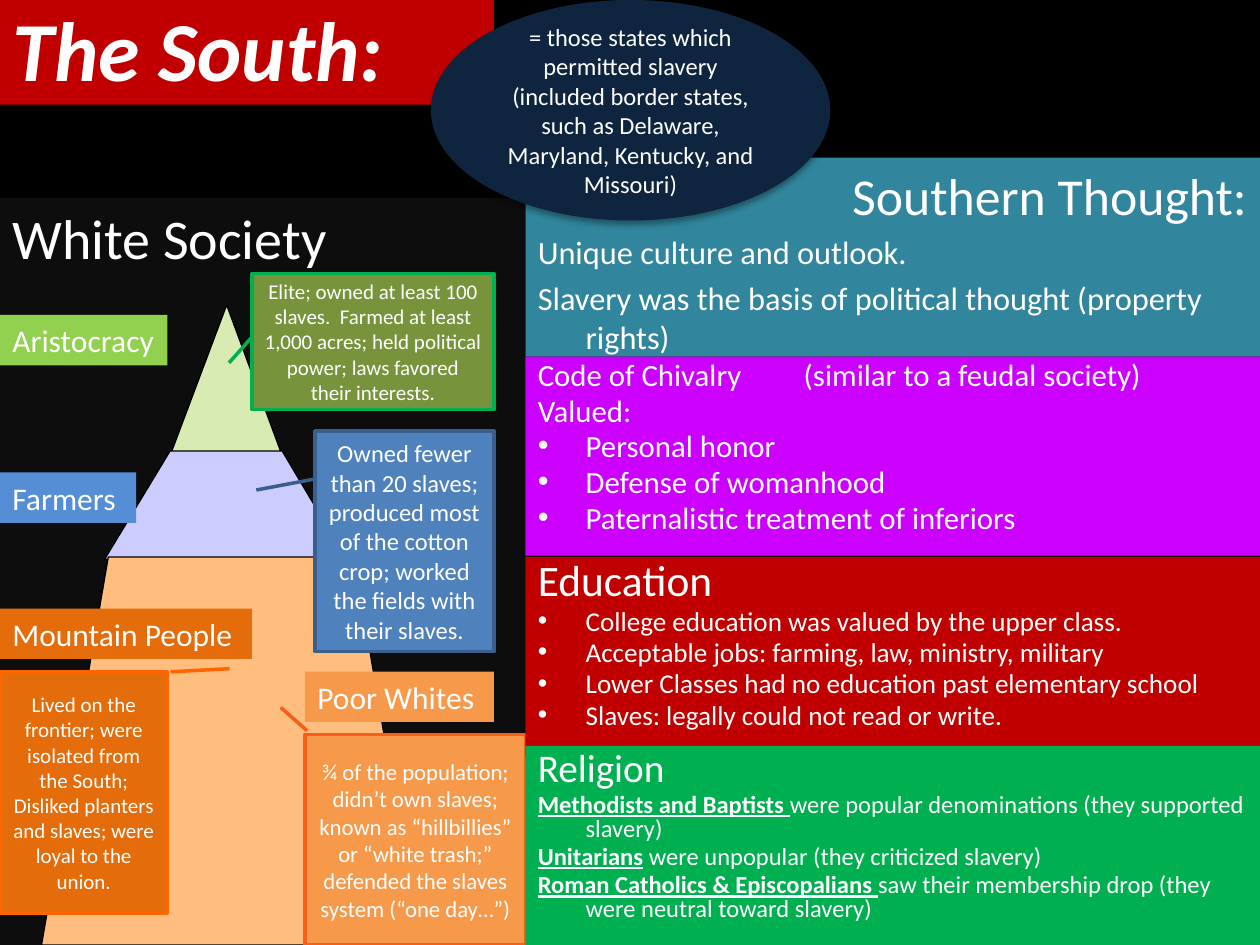
import pptx
import pptx.util
from lxml import etree
from pptx.dml.color import RGBColor
from pptx.enum.shapes import MSO_SHAPE
from pptx.enum.text import MSO_ANCHOR, MSO_AUTO_SIZE, PP_ALIGN
from pptx.oxml.ns import qn
from pptx.util import Inches

C = {
    "black": "000000", "white": "FFFFFF", "panel": "0D0D0D", "red": "C00000",
    "teal": "31859C", "purple": "CC00FF", "green": "00B050", "navy": "0F243E",
    "lime": "92D050", "olive": "77933C", "sky": "558ED5", "blue": "4F81BD",
    "blue_line": "3A5F8C", "rust": "E46C0A", "orange": "FF6600",
    "peach": "F7994B", "peach_line": "F65E1A", "tier_top": "D8EBB3",
    "tier_middle": "CCCCFF", "tier_base": "FFBE7D",
}
HANG = 0.38


def rgb(name):
    return RGBColor.from_string(C[name])


def paint(sp, fill, line=None, width=2):
    sp.fill.solid()
    sp.fill.fore_color.rgb = rgb(fill)
    if line:
        sp.line.color.rgb = rgb(line)
        sp.line.width = pptx.util.Pt(width)
    else:
        sp.line.fill.background()


def write(tf, text, size, lead="", bold=False, italic=False, align=PP_ALIGN.LEFT,
          hang=False, bullet=False, spacing=None, tab=None):
    """Add a paragraph; lead is a bold, underlined opening, tab a stop in inches."""
    first = not tf.paragraphs[0].runs
    p = tf.paragraphs[0] if first else tf.add_paragraph()
    pPr = p._p.get_or_add_pPr()
    if hang:
        pPr.set("marL", str(Inches(HANG)))
        pPr.set("indent", str(-Inches(HANG)))
    if bullet:
        etree.SubElement(pPr, qn("a:buFont"), typeface="Arial")
        etree.SubElement(pPr, qn("a:buChar"), char="•")
    if tab:
        tabs = etree.SubElement(pPr, qn("a:tabLst"))
        etree.SubElement(tabs, qn("a:tab"), pos=str(Inches(tab)), algn="l")
    p.alignment = align
    if spacing:
        p.line_spacing = spacing
    if not first:
        p.space_before = pptx.util.Pt(round(size * 0.2, 1))
    for part, is_lead in ((lead, True), (text, False)):
        if part:
            r = p.add_run()
            r.text = part
            r.font.name = "Calibri"
            r.font.size = pptx.util.Pt(size)
            r.font.bold = bold or is_lead
            r.font.italic = italic
            r.font.underline = is_lead
            r.font.color.rgb = rgb("white")


def text_block(s, x, y, w, h, fill):
    sp = s.shapes.add_textbox(Inches(x), Inches(y), Inches(w), Inches(h))
    paint(sp, fill)
    sp.text_frame.word_wrap = True
    return sp.text_frame


def centred_shape(s, kind, x, y, w, h, text, size, fill, line=None):
    sp = s.shapes.add_shape(kind, Inches(x), Inches(y), Inches(w), Inches(h))
    sp.shadow.inherit = False
    paint(sp, fill, line)
    tf = sp.text_frame
    tf.word_wrap = True
    tf.vertical_anchor = MSO_ANCHOR.MIDDLE
    write(tf, text, size, align=PP_ALIGN.CENTER)
    return sp


def title(s, x, y, w, h):
    sp = s.shapes.title
    sp.left, sp.top, sp.width, sp.height = map(Inches, (x, y, w, h))
    paint(sp, "red")
    tf = sp.text_frame
    tf.auto_size = MSO_AUTO_SIZE.NONE
    tf.vertical_anchor = MSO_ANCHOR.BOTTOM
    write(tf, "The South:", 48, bold=True, italic=True)


def definition(s, x, y, w, h):
    sp = centred_shape(
        s, MSO_SHAPE.OVAL, x, y, w, h,
        "= those states which permitted slavery (included border states, "
        "such as Delaware, Maryland, Kentucky, and Missouri)", 14, "navy")
    effects = sp._element.spPr.find(qn("a:effectLst"))
    shadow = etree.SubElement(effects, qn("a:outerShdw"), blurRad="40000",
                              dist="23000", dir="5400000", rotWithShape="0")
    color = etree.SubElement(shadow, qn("a:srgbClr"), val=C["black"])
    etree.SubElement(color, qn("a:alpha"), val="35000")


def pyramid(s, x, y):
    tiers = [
        ("tier_top", [(1.8, 0.85), (2.26, 2.1), (1.33, 2.1)]),
        ("tier_middle", [(1.35, 2.01), (2.24, 2.01), (2.75, 2.87), (0.83, 2.87)]),
        ("tier_base", [(0.86, 2.85), (2.81, 2.85), (3.33, 5.93), (0.33, 5.93)]),
    ]
    group = s.shapes.add_group_shape()
    for fill, corners in tiers:
        points = [(Inches(x + dx), Inches(y + dy)) for dx, dy in corners]
        builder = group.shapes.build_freeform(*points[0])
        builder.add_line_segments(points[1:], close=True)
        sp = builder.convert_to_shape()
        sp.shadow.inherit = False
        paint(sp, fill, "black", 0.75)


def callouts(s, x, y):
    notes = [
        (2, 0.6, 1.92, 1.08, "olive", "green", 12, (0.477, -0.005, 0.657, -0.095),
         "Elite; owned at least 100 slaves.  Farmed at least 1,000 acres; held "
         "political power; laws favored their interests."),
        (2.5, 1.85, 1.42, 1.75, "blue", "blue_line", 14, (0.217, 0.006, 0.268, -0.328),
         "Owned fewer than 20 slaves; produced most of the cotton crop; worked "
         "the fields with their slaves."),
        (0, 3.76, 1.33, 1.92, "rust", "orange", 12, (0.001, 1.019, -0.012, 1.371),
         "Lived on the frontier; were isolated from the South; Disliked planters "
         "and slaves; were loyal to the union."),
        (2.42, 4.26, 1.75, 1.67, "peach", "peach_line", 13, (-0.018, 0.01, -0.129, -0.11),
         "¾ of the population; didn’t own slaves; known as “hillbillies” or “white "
         "trash;” defended the slaves system (“one day…”)"),
    ]
    for dx, dy, w, h, fill, line, size, pointer, text in notes:
        sp = centred_shape(s, MSO_SHAPE.LINE_CALLOUT_1, x + dx, y + dy, w, h,
                           text, size, fill, line)
        for i, value in enumerate(pointer):
            sp.adjustments[i] = value


def class_labels(s, x, y):
    labels = [
        ("Aristocracy", 0, 0.93, 1.33, "lime"),
        ("Farmers", 0, 2.18, 1.08, "sky"),
        ("Mountain People", 0, 3.26, 2, "rust"),
        ("Poor Whites", 2.42, 3.76, 1.5, "peach"),
    ]
    for text, dx, dy, w, fill in labels:
        write(text_block(s, x + dx, y + dy, w, 0.4, fill), text, 18)


def topic(s, x, y, w, h, fill, rows, spacing=0.8):
    """Fill a panel with rows of (text, size, other formats)."""
    tf = text_block(s, x, y, w, h, fill)
    for text, size, fmt in rows:
        write(tf, text, size, **{"hang": True, "spacing": spacing, **fmt})


def bullets(size, *texts):
    return [(text, size, {"bullet": True}) for text in texts]


def main():
    prs = pptx.Presentation()
    prs.slide_width, prs.slide_height = Inches(10), Inches(7.5)
    s = prs.slides.add_slide(prs.slide_layouts[5])
    s.background.fill.solid()
    s.background.fill.fore_color.rgb = rgb("black")

    x, w, h = 4.17, 5.83, 1.58
    title(s, 0, 0, 3.92, 0.83)
    topic(s, x, 1.25, w, h, "teal", [
        ("Southern Thought:", 29.6, {"align": PP_ALIGN.RIGHT}),
        ("Unique culture and outlook.", 18.5, {}),
        ("Slavery was the basis of political thought (property rights)", 18.5, {}),
    ], spacing=None)

    society = 0, 1.57
    write(text_block(s, *society, 4.17, 5.93, "panel"), "White Society", 32)
    definition(s, 3.42, 0, 3.17, 1.75)
    pyramid(s, *society)
    callouts(s, *society)
    class_labels(s, *society)

    topic(s, x, 2.83, w, h, "purple", [
        ("Code of Chivalry\t(similar to a feudal society)", 17.6,
         {"hang": False, "tab": 2.11}),
        ("Valued:", 17.6, {}),
        *bullets(17.6, "Personal honor", "Defense of womanhood",
                 "Paternalistic treatment of inferiors"),
    ])
    topic(s, x, 4.42, w, h, "red", [
        ("Education", 24.8, {}),
        *bullets(15.5, "College education was valued by the upper class.",
                 "Acceptable jobs: farming, law, ministry, military",
                 "Lower Classes had no education past elementary school",
                 "Slaves: legally could not read or write."),
    ])
    topic(s, x, 5.92, w, h, "green", [
        ("Religion", 22.4, {}),
        ("were popular denominations (they supported slavery)", 14,
         {"lead": "Methodists and Baptists "}),
        (" were unpopular (they criticized slavery)", 14, {"lead": "Unitarians"}),
        ("saw their membership drop (they were neutral toward slavery)", 14,
         {"lead": "Roman Catholics & Episcopalians "}),
    ])
    prs.save("out.pptx")


if __name__ == "__main__":
    main()
